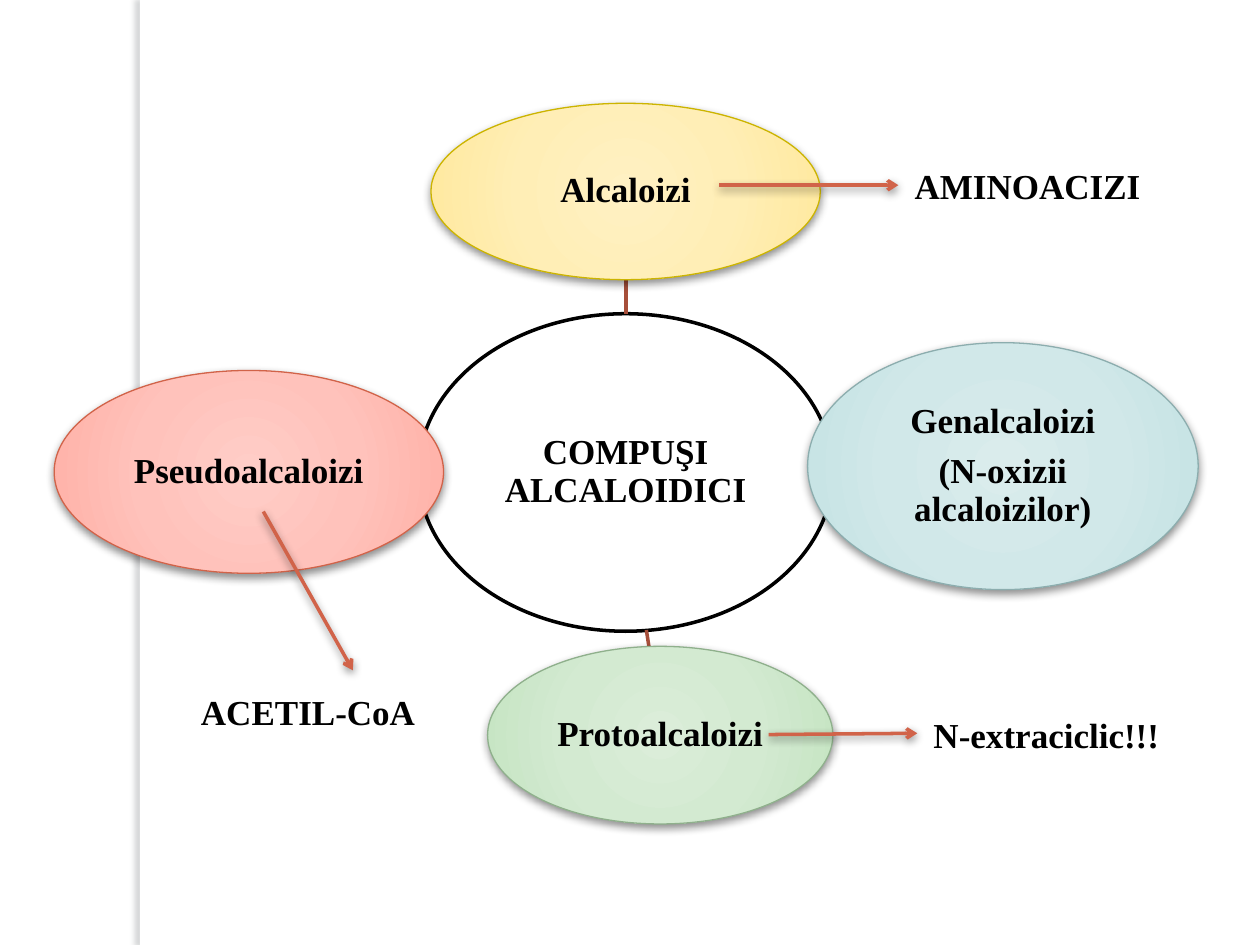
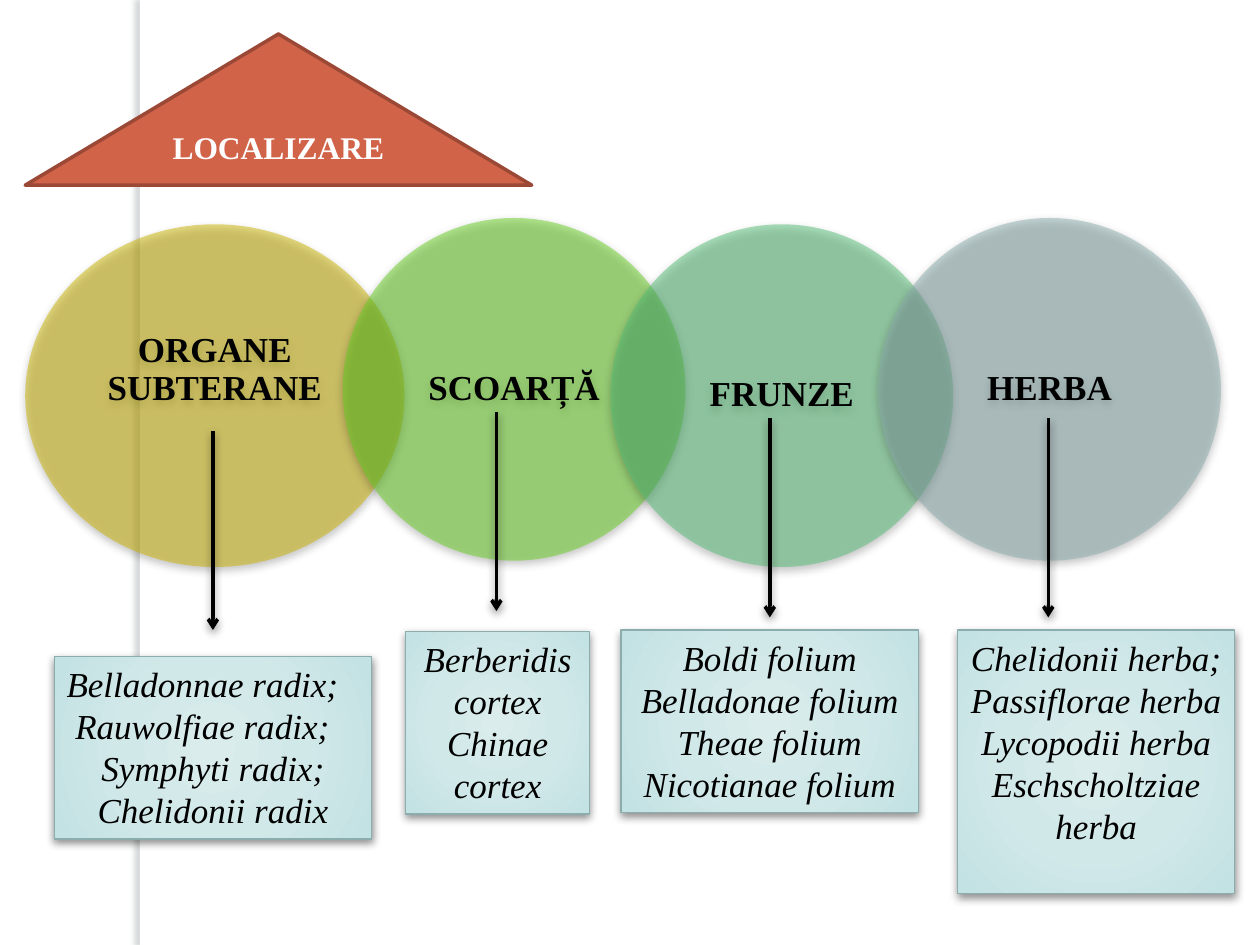
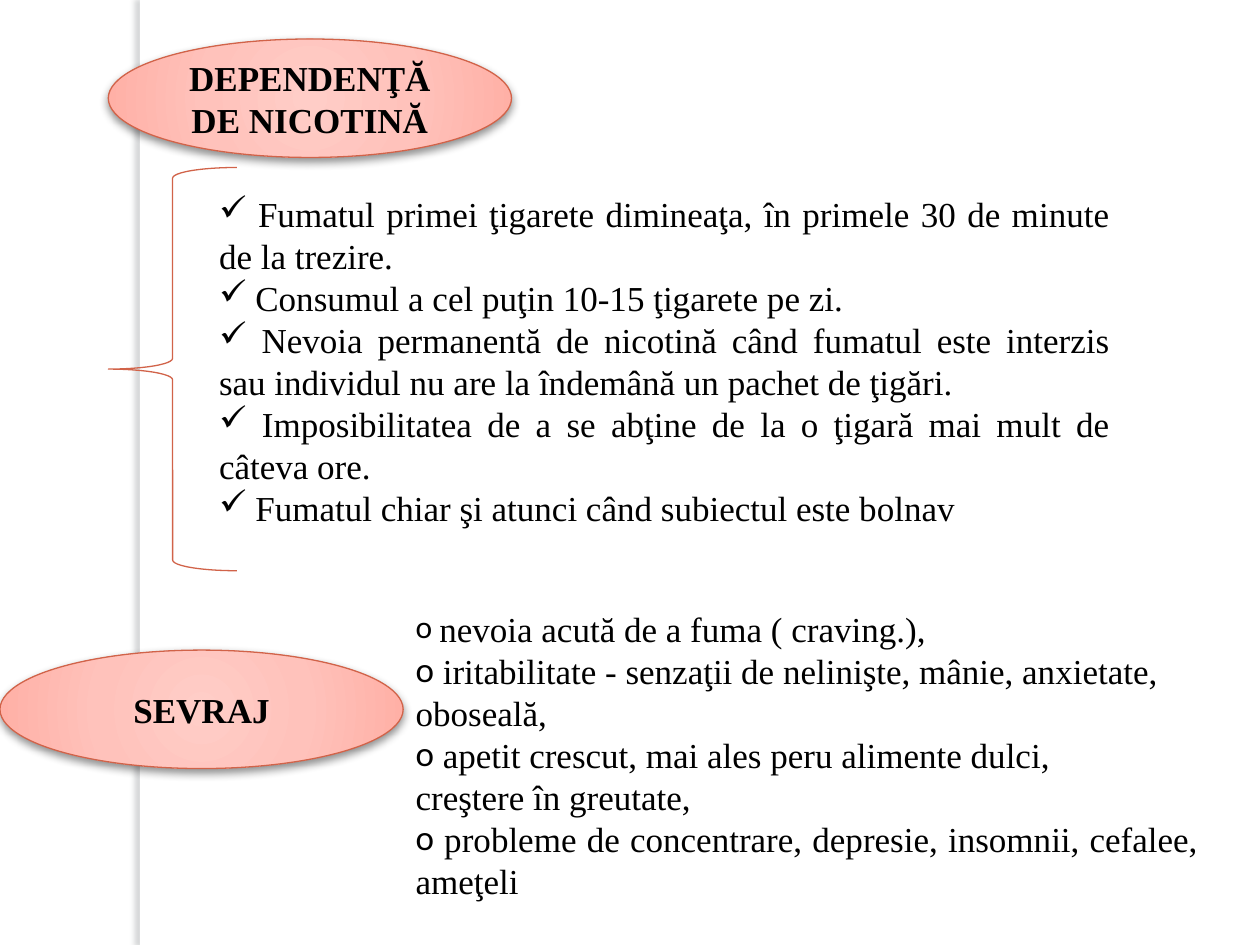
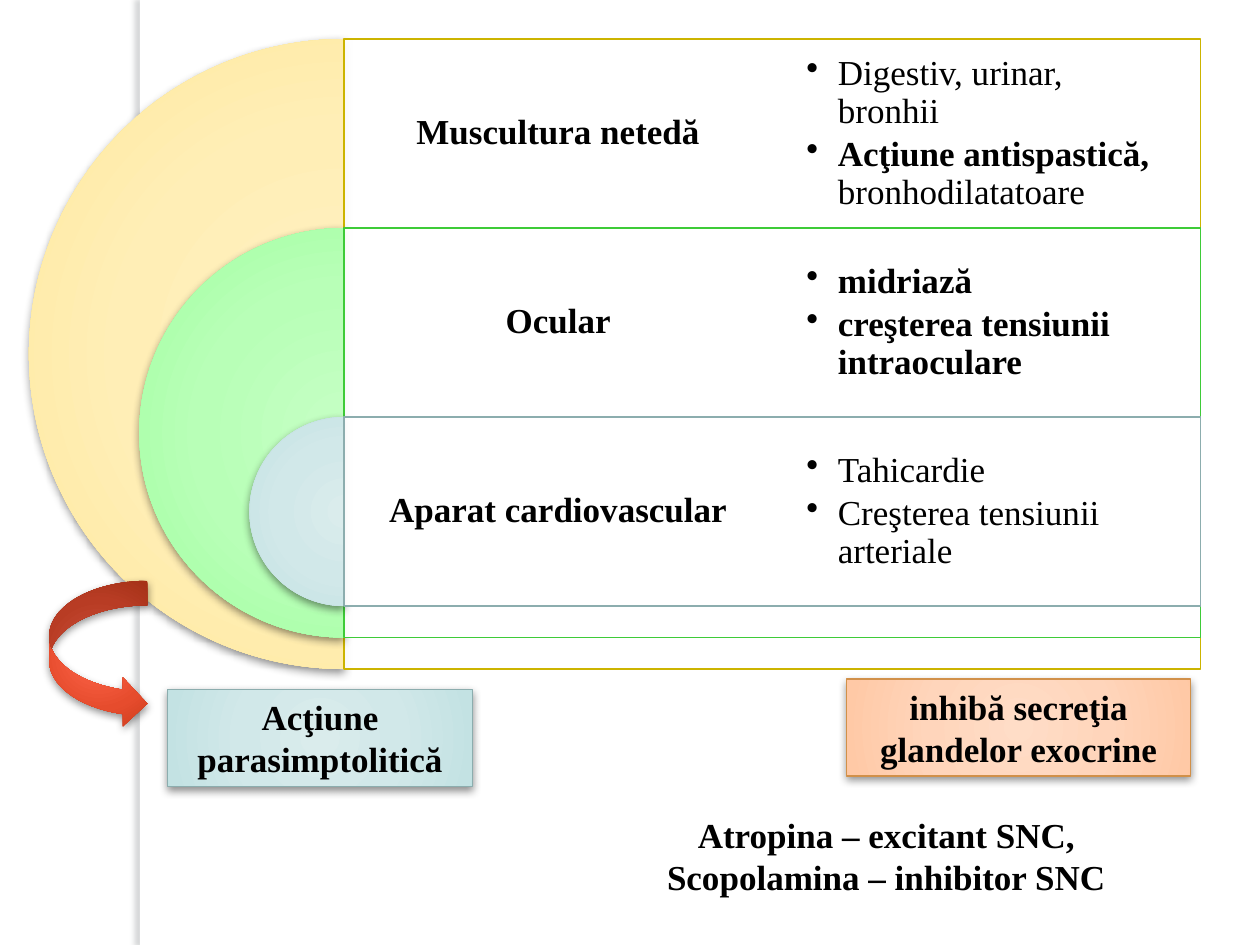
from lxml.etree import SubElement
from pptx import Presentation
from pptx.dml.color import RGBColor
from pptx.enum.shapes import MSO_CONNECTOR, MSO_SHAPE
from pptx.enum.text import MSO_ANCHOR, PP_ALIGN
from pptx.oxml.ns import qn
from pptx.util import Inches, Pt

WIDTH, HEIGHT = 10, 7.5
FONT = "Times New Roman"
COLORS = {
    "white": "FFFFFF", "black": "000000", "band shadow": "61686B",
    "red": "D16349", "dark red": "9B4936", "spoke": "A74F3A",
    "gold": "CCB400", "teal": "8CADAE", "sage": "8FB08C", "orange": "D19049",
    "lime": "67D021", "mint": "56BF77", "bright green": "3ECB38",
}
# Radial blends, from the centre outwards: (position in percent, colour)
GLOWS = {
    "gold": [(0, "FFF1C3"), (50, "FFEEB6"), (97, "FFE99E"), (100, "FFE898")],
    "teal": [(0, "DAECEC"), (50, "D1E8E9"), (97, "C3E2E3"), (100, "BEE1E2")],
    "sage": [(0, "DBEDD9"), (50, "D3EAD1"), (97, "C5E4C2"), (100, "C0E4BD")],
    "red": [(0, "FFCDC7"), (50, "FFC2BB"), (97, "FFB0A6"), (100, "FFAAA0")],
    "orange": [(0, "FFDDC7"), (50, "FFD5BB"), (97, "FFC9A6"), (100, "FFC6A0")],
    "bright green": [(0, "C5FFC4"), (50, "B8FFB7"), (97, "A2FFA1"), (100, "9CFF9A")],
    "arrow": [(0, "FB6044"), (15, "FA6044"), (62, "E64C2D"), (97, "D03F1F"), (100, "D03915")],
}
# colour, opacity in percent, blur and distance in points, direction in degrees
SOFT_SHADOW = ("black", 43, 5, 2, 90)
BAND_SHADOW = ("band shadow", 25, 3, 3, 180)

# Slide 1: the hub, its satellites with their spokes, and what they come from
HUB = (["COMPUŞI ALCALOIDICI"], (3.32, 2.49, 3.29, 2.52))
SATELLITES = [
    (["Alcaloizi"], (3.42, 0.82, 3.09, 1.4), "gold", (4.97, 2.49, 4.97, 2.21)),
    (["Genalcaloizi", "(N-oxizii alcaloizilor)"], (6.41, 2.72, 3.1, 1.96), "teal",
     (6.61, 3.72, 6.41, 3.72)),
    (["Protoalcaloizi"], (3.87, 5.13, 2.74, 1.41), "sage", (5.13, 5, 5.15, 5.13)),
    (["Pseudoalcaloizi"], (0.43, 2.94, 3.09, 1.61), "red", (3.32, 3.75, 3.52, 3.75)),
]
ORIGINS = [
    ("AMINOACIZI", (7.13, 1.26), (5.71, 1.47, 7.13, 1.47)),
    ("ACETIL-CoA", (1.42, 5.43), (2.09, 4.06, 2.8, 5.32)),
    ("N-extraciclic!!!", (7.28, 5.61), (6.1, 5.83, 7.28, 5.82)),
]

# Slide 2: organ, colour, arrow start, plants and their box
ORGANS = [
    ("ORGANE SUBTERANE", "gold", (1.69, 3.42),
     ["Belladonnae radix;", " Rauwolfiae radix;", "Symphyti radix;", "Chelidonii radix"],
     (0.43, 5.21, 2.52, 1.45)),
    ("SCOARȚĂ", "lime", (3.94, 3.27), ["Berberidis cortex", "Chinae cortex"],
     (3.22, 5.01, 1.46, 1.45)),
    ("FRUNZE", "mint", (6.11, 3.32),
     ["Boldi folium", "Belladonae folium", "Theae folium", "Nicotianae folium"],
     (4.93, 5, 2.36, 1.45)),
    ("HERBA", "teal", (8.32, 3.32),
     ["Chelidonii herba;", "Passiflorae herba", "Lycopodii herba", "Eschscholtziae herba"],
     (7.6, 5, 2.2, 2.09)),
]

# Slide 3
DEPENDENCE = [
    " Fumatul primei ţigarete dimineaţa, în primele 30 de minute de la trezire.",
    " Consumul a cel puţin 10-15 ţigarete pe zi.",
    " Nevoia permanentă de nicotină când fumatul este interzis sau individul nu are "
    "la îndemână un pachet de ţigări.",
    " Imposibilitatea de a se abţine de la o ţigară mai mult de câteva ore.",
    " Fumatul chiar şi atunci când subiectul este bolnav",
]
WITHDRAWAL = [
    [(" ", {"size": 18, "font": "Calibri"}), ("nevoia acută de a fuma ( craving.),", {})],
    " iritabilitate - senzaţii de nelinişte, mânie, anxietate,",
    "oboseală,",
    " apetit crescut, mai ales peru alimente dulci,",
    "creştere în greutate,",
    " probleme de concentrare, depresie, insomnii, cefalee, ameţeli",
]
WITHDRAWAL_UNBULLETED = (2, 4)

# Slide 4: system, colour, effects
SYSTEMS = [
    ("Muscultura netedă", "gold",
     ["Digestiv, urinar, bronhii",
      [("Acţiune antispastică, ", {"bold": True}), ("bronhodilatatoare", {})]]),
    ("Ocular", "bright green",
     [[("midriază", {"bold": True})],
      [("creşterea tensiunii intraoculare", {"bold": True})]]),
    ("Aparat cardiovascular", "teal", ["Tahicardie", "Creşterea tensiunii arteriale"]),
]
ACTIONS = [
    ("Acţiune parasimptolitică", "teal", (1.33, 5.47, 2.42, 0.77)),
    ("inhibă secreţia glandelor exocrine", "orange", (6.72, 5.39, 2.73, 0.77)),
]
CNS_EFFECTS = ["Atropina – excitant SNC,", "Scopolamina – inhibitor SNC"]


def rgb(name):
    return RGBColor.from_string(COLORS[name])


def add_color(parent, hex_value, opacity=100):
    color = SubElement(parent, qn("a:srgbClr"), val=hex_value)
    if opacity < 100:
        SubElement(color, qn("a:alpha"), val=str(opacity * 1000))


def cast_shadow(drawn, shadow):
    """Give a shape or connector its own effect list, empty when shadow is None."""
    effects = SubElement(drawn._element.spPr, qn("a:effectLst"))
    if shadow:
        color, opacity, blur, distance, direction = shadow
        outer = SubElement(effects, qn("a:outerShdw"), blurRad=str(Pt(blur)),
                           dist=str(Pt(distance)), dir=str(direction * 60000),
                           algn="ctr", rotWithShape="0")
        add_color(outer, COLORS[color], opacity)


def fill_glow(shape, stops):
    shape.fill.solid()
    solid = shape._element.spPr.find(qn("a:solidFill"))
    glow = solid.makeelement(qn("a:gradFill"), {"rotWithShape": "1"})
    stop_list = SubElement(glow, qn("a:gsLst"))
    for position, hex_value in stops:
        add_color(SubElement(stop_list, qn("a:gs"), pos=str(position * 1000)), hex_value)
    path = SubElement(glow, qn("a:path"), path="circle")
    SubElement(path, qn("a:fillToRect"), l="50000", t="50000", r="50000", b="50000")
    solid.getparent().replace(solid, glow)


def draw(slide, kind, box, fill=None, glow=None, line=None, line_width=0.75,
         opacity=100, shadow=None):
    shape = slide.shapes.add_shape(kind, *map(Inches, box))
    if glow:
        fill_glow(shape, GLOWS[glow])
    elif fill:
        shape.fill.solid()
        shape.fill.fore_color.rgb = rgb(fill)
        if opacity < 100:
            color = shape._element.spPr.find(qn("a:solidFill"))[0]
            SubElement(color, qn("a:alpha"), val=str(opacity * 1000))
    else:
        shape.fill.background()
    if line:
        shape.line.color.rgb = rgb(line)
        shape.line.width = Pt(line_width)
    else:
        shape.line.fill.background()
    cast_shadow(shape, shadow)
    return shape


def draw_glowing(slide, kind, box, color):
    return draw(slide, kind, box, glow=color, line=color, shadow=SOFT_SHADOW)


def connect(slide, ends, color, arrow=True):
    line = slide.shapes.add_connector(MSO_CONNECTOR.STRAIGHT, *map(Inches, ends))
    line.line.color.rgb = rgb(color)
    line.line.width = Pt(2)
    if arrow:
        SubElement(line.line._get_or_add_ln(), qn("a:tailEnd"), type="arrow")
    cast_shadow(line, SOFT_SHADOW if arrow else None)


def add_bullet(paragraph, mark, font, indent):
    properties = paragraph._p.get_or_add_pPr()
    properties.set("marL", str(Inches(indent)))
    properties.set("indent", str(-Inches(indent)))
    if font:
        SubElement(properties, qn("a:buFont"), typeface=font)
    SubElement(properties, qn("a:buChar"), char=mark)


def write(shape, paragraphs, align=PP_ALIGN.CENTER, anchor=MSO_ANCHOR.TOP,
          insets=(0.1, 0.05, 0.1, 0.05), spacing=None, after=0, color="black",
          size=20, bold=False, italic=False, bullet=None, bullet_font=None,
          indent=0, unbulleted=()):
    """Write paragraphs, each a string or a list of (text, changes) runs."""
    frame = shape.text_frame
    frame.word_wrap = True
    frame.vertical_anchor = anchor
    (frame.margin_left, frame.margin_top,
     frame.margin_right, frame.margin_bottom) = map(Inches, insets)
    for index, runs in enumerate(paragraphs):
        paragraph = frame.add_paragraph() if index else frame.paragraphs[0]
        paragraph.alignment = align
        if spacing:
            paragraph.line_spacing = spacing
        paragraph.space_after = Pt(after)
        if bullet and index not in unbulleted:
            add_bullet(paragraph, bullet, bullet_font, indent)
        for text, changes in [(runs, {})] if isinstance(runs, str) else runs:
            run = paragraph.add_run()
            run.text = text
            run.font.name = changes.get("font", FONT)
            run.font.size = Pt(changes.get("size", size))
            run.font.bold = changes.get("bold", bold)
            run.font.italic = italic
            run.font.color.rgb = rgb(color)


def write_label(shape, paragraphs, insets):
    """Write a bold, tightly set diagram label in the middle of its shape."""
    write(shape, paragraphs, anchor=MSO_ANCHOR.MIDDLE, insets=insets,
          spacing=0.9, after=7, bold=True)


def add_text(slide, box, paragraphs, **style):
    write(slide.shapes.add_textbox(*map(Inches, box)), paragraphs, **style)


def new_slide(deck):
    slide = deck.slides.add_slide(deck.slide_layouts[6])
    draw(slide, MSO_SHAPE.RECTANGLE, (1.11, 0, 0.08, HEIGHT), fill="white",
         shadow=BAND_SHADOW)
    return slide


def build_compounds(slide):
    tight = (0.01,) * 4
    hub_text, hub_box = HUB
    hub = draw(slide, MSO_SHAPE.OVAL, hub_box, fill="white", line="black", line_width=2)
    write_label(hub, hub_text, tight)
    for text, box, color, spoke in SATELLITES:
        connect(slide, spoke, "spoke", arrow=False)
        write_label(draw_glowing(slide, MSO_SHAPE.OVAL, box, color), text, tight)
    for text, corner, arrow in ORIGINS:
        connect(slide, arrow, "red")
        add_text(slide, (*corner, 2.05, 0.44), [text], bold=True)


def build_locations(slide):
    roof = draw(slide, MSO_SHAPE.ISOSCELES_TRIANGLE, (0.2, 0.27, 4.02, 1.2),
                fill="red", line="dark red", line_width=2)
    write(roof, ["LOCALIZARE"], anchor=MSO_ANCHOR.MIDDLE, color="white", size=18, bold=True)

    diameter, first_width, pitch = 2.72, 3.01, 2.125
    for index, (organ, color, _, _, _) in enumerate(ORGANS):
        left = 2.72 + pitch * (index - 1) if index else 0.2
        top = 1.73 if index % 2 else 1.78
        circle = draw(slide, MSO_SHAPE.OVAL,
                      (left, top, diameter if index else first_width, diameter),
                      fill=color, opacity=50, shadow=SOFT_SHADOW)
        write_label(circle, [organ], (0.15, 0.03, 0.15, 0.03 if index else 0.43))

    for _, _, (x, y), plants, box in ORGANS:
        connect(slide, (x, y, x, y + 1.58), "black")
        plant_box = draw_glowing(slide, MSO_SHAPE.RECTANGLE, box, "teal")
        write(plant_box, plants, italic=True)
        if box == ORGANS[0][-1]:
            for paragraph in plant_box.text_frame.paragraphs[:2]:
                paragraph.alignment = PP_ALIGN.LEFT


def build_nicotine(slide):
    for title, corner in [("DEPENDENŢĂ DE NICOTINĂ", (0.86, 0.31)), ("SEVRAJ", (0, 5.16))]:
        oval = draw_glowing(slide, MSO_SHAPE.OVAL, (*corner, 3.2, 0.94), "red")
        write(oval, [title], anchor=MSO_ANCHOR.MIDDLE, bold=True)
    draw(slide, MSO_SHAPE.LEFT_BRACE, (0.86, 1.33, 1.02, 3.2), line="red")
    add_text(slide, (1.64, 1.48, 7.27, 2.89), DEPENDENCE, align=PP_ALIGN.JUSTIFY, bullet="✓")
    add_text(slide, (3.2, 4.77, 6.41, 2.46), WITHDRAWAL, align=PP_ALIGN.JUSTIFY,
             bullet="o", bullet_font="Calibri", unbulleted=WITHDRAWAL_UNBULLETED)


def build_effects(slide):
    left, top, column, row = 2.73, 0.31, 3.4, 1.5
    for index, (system, color, _) in enumerate(SYSTEMS):
        size, y = 5 - 1.75 * index, top + row * index
        half = draw(slide, MSO_SHAPE.PIE, (left - size / 2, y, size, size),
                    glow=color, shadow=SOFT_SHADOW)
        half.adjustments[0], half.adjustments[1] = 54, 162
        draw(slide, MSO_SHAPE.RECTANGLE, (left, y, 2 * column, size),
             fill="white", opacity=90, line=color)
        name = slide.shapes.add_textbox(*map(Inches, (left, y, column, row)))
        write_label(name, [system], (0.08,) * 4)
    for index, (_, _, effects) in enumerate(SYSTEMS):
        add_text(slide, (left + column, top + row * index, column, row), effects,
                 align=PP_ALIGN.LEFT, anchor=MSO_ANCHOR.MIDDLE, insets=(0.27,) * 4,
                 spacing=0.9, after=3, bullet="•", indent=0.25)

    draw(slide, MSO_SHAPE.CURVED_RIGHT_ARROW, (0.39, 4.61, 0.78, 1.17),
         glow="arrow", shadow=SOFT_SHADOW)
    for action, color, box in ACTIONS:
        write(draw_glowing(slide, MSO_SHAPE.RECTANGLE, box, color), [action], bold=True)
    add_text(slide, (5.16, 6.41, 3.75, 0.77), CNS_EFFECTS, bold=True)


def main():
    deck = Presentation()
    deck.slide_width, deck.slide_height = Inches(WIDTH), Inches(HEIGHT)
    for build in (build_compounds, build_locations, build_nicotine, build_effects):
        build(new_slide(deck))
    deck.save("out.pptx")


if __name__ == "__main__":
    main()
